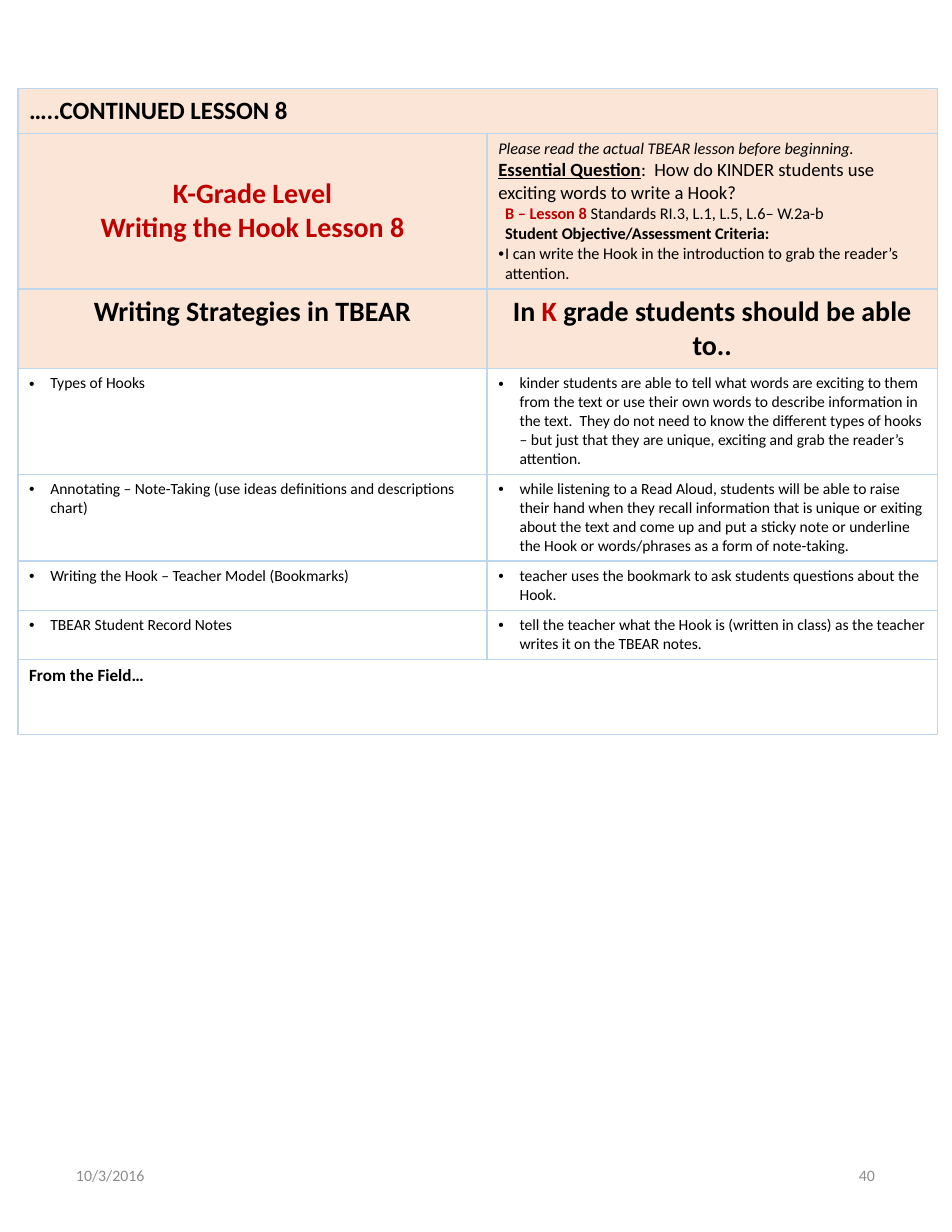
from lxml.etree import SubElement
from pptx import Presentation
from pptx.dml.color import RGBColor
from pptx.enum.text import MSO_ANCHOR, PP_ALIGN
from pptx.oxml.ns import qn
from pptx.util import Inches, Pt

FONT = "Calibri"
BLACK, RED, GRAY = "000000", "C00000", "8C8C8C"
PEACH, WHITE, BORDER = "FBE5D6", "FFFFFF", "BDD7EE"

COLUMN_WIDTHS = [4.19, 4.02]
ROW_HEIGHTS = [0.4, 1.39, 0.71, 0.94, 0.77, 0.44, 0.44, 0.67]

STRATEGIES = [
    ("Types of Hooks",
     "kinder students are able to tell what words are exciting to them from the text or use "
     "their own words to describe information in the text.  They do not need to know the "
     "different types of hooks – but just that they are unique, exciting and grab the "
     "reader’s attention."),
    ("Annotating – Note-Taking (use ideas definitions and descriptions chart)",
     "while listening to a Read Aloud, students will be able to raise their hand when they "
     "recall information that is unique or exiting about the text and come up and put a sticky "
     "note or underline the Hook or words/phrases as a form of note-taking."),
    ("Writing the Hook – Teacher Model (Bookmarks)",
     "teacher uses the bookmark to ask students questions about the Hook."),
    ("TBEAR Student Record Notes",
     "tell the teacher what the Hook is (written in class) as the teacher writes it on the "
     "TBEAR notes."),
]


def color(hex_value):
    return RGBColor.from_string(hex_value)


def add_run(paragraph, text, size=10.5, fill=BLACK, bold=False, italic=False, underline=False):
    run = paragraph.add_run()
    run.text = text
    font = run.font
    font.name, font.size = FONT, Pt(size)
    font.bold, font.italic, font.underline = bold, italic, underline
    font.color.rgb = color(fill)


def add_paragraph(frame, text="", align=PP_ALIGN.LEFT, margin=0, indent=0, bullet=False, **style):
    """Fill the frame's first paragraph if it is empty, otherwise append one."""
    first = frame.paragraphs[0]
    paragraph = frame.add_paragraph() if first.runs else first
    paragraph.alignment = align
    properties = paragraph._p.get_or_add_pPr()
    properties.set("marL", str(Inches(margin)))
    properties.set("indent", str(Inches(indent)))
    if bullet:
        bullet_color = SubElement(properties, qn("a:buClr"))
        SubElement(bullet_color, qn("a:srgbClr"), val=BLACK)
        SubElement(properties, qn("a:buFont"), typeface="Arial")
        SubElement(properties, qn("a:buChar"), char="•")
    if text:
        add_run(paragraph, text, **style)
    return paragraph


def format_cell(cell, fill):
    properties = cell._tc.get_or_add_tcPr()
    for side in ("a:lnL", "a:lnR", "a:lnT", "a:lnB"):
        line = SubElement(properties, qn(side), w=str(Pt(1)))
        solid = SubElement(line, qn("a:solidFill"))
        SubElement(solid, qn("a:srgbClr"), val=BORDER)
    cell.fill.solid()
    cell.fill.fore_color.rgb = color(fill)


def add_lesson_header(table):
    # Continued banner
    banner = table.cell(0, 0)
    banner.merge(table.cell(0, 1))
    banner.vertical_anchor = MSO_ANCHOR.MIDDLE
    add_paragraph(banner.text_frame, "…..CONTINUED LESSON 8", size=16, bold=True)

    # Lesson name
    name, details = table.cell(1, 0), table.cell(1, 1)
    name.vertical_anchor = details.vertical_anchor = MSO_ANCHOR.MIDDLE
    for text in ("K-Grade Level", "Writing the Hook Lesson 8"):
        add_paragraph(name.text_frame, text, align=PP_ALIGN.CENTER, size=18, fill=RED, bold=True)

    # Essential question and objective
    frame = details.text_frame
    add_paragraph(frame, "Please read the actual TBEAR lesson before beginning.", italic=True)
    question = add_paragraph(frame, "Essential Question", size=12, bold=True, underline=True)
    add_run(question, ":  How do KINDER students use exciting words to write a Hook?", size=12)
    standards = add_paragraph(frame, "B – Lesson 8 ", indent=0.06, fill=RED, bold=True)
    add_run(standards, "Standards RI.3, L.1, L.5, L.6– W.2a-b")
    add_paragraph(frame, "Student Objective/Assessment Criteria:", indent=0.06, bold=True)
    add_paragraph(frame, "I can write the Hook in the introduction to grab the reader’s attention.",
                  margin=0.06, indent=-0.06, bullet=True)


def add_strategy_rows(table):
    # Column headings
    heading = {"size": 18, "bold": True}
    add_paragraph(table.cell(2, 0).text_frame, "Writing Strategies in TBEAR",
                  align=PP_ALIGN.CENTER, **heading)
    outcome = add_paragraph(table.cell(2, 1).text_frame, "In ", align=PP_ALIGN.CENTER, **heading)
    add_run(outcome, "K ", fill=RED, **heading)
    add_run(outcome, "grade students should be able to..", **heading)

    # Bulleted strategies and outcomes
    for row, texts in enumerate(STRATEGIES, start=3):
        for column, text in enumerate(texts):
            add_paragraph(table.cell(row, column).text_frame, text,
                          margin=0.19, indent=-0.19, bullet=True, size=10)


def add_lesson_table(slide, left, top):
    shape = slide.shapes.add_table(
        len(ROW_HEIGHTS), len(COLUMN_WIDTHS), Inches(left), Inches(top),
        Inches(sum(COLUMN_WIDTHS)), Inches(sum(ROW_HEIGHTS)))
    table = shape.table
    table.first_row = table.horz_banding = False
    for column, width in zip(table.columns, COLUMN_WIDTHS):
        column.width = Inches(width)
    for index, (row, height) in enumerate(zip(table.rows, ROW_HEIGHTS)):
        row.height = Inches(height)
        for cell in row.cells:
            format_cell(cell, PEACH if index < 3 else WHITE)

    add_lesson_header(table)
    add_strategy_rows(table)

    # Field notes
    notes = table.cell(7, 0)
    notes.merge(table.cell(7, 1))
    add_paragraph(notes.text_frame, "From the Field…", size=11, bold=True)


def add_footer(slide, left, top, width, height):
    box_width = 1.91
    parts = [("10/3/2016", left, PP_ALIGN.LEFT),
             ("40", left + width - box_width, PP_ALIGN.RIGHT)]
    for text, x, align in parts:
        box = slide.shapes.add_textbox(Inches(x), Inches(top), Inches(box_width), Inches(height))
        frame = box.text_frame
        frame.word_wrap = True
        frame.vertical_anchor = MSO_ANCHOR.MIDDLE
        add_paragraph(frame, text, align=align, size=10.2, fill=GRAY)


def main():
    presentation = Presentation()
    presentation.slide_width, presentation.slide_height = Inches(8.5), Inches(11)
    slide = presentation.slides.add_slide(presentation.slide_layouts[6])
    add_lesson_table(slide, 0.16, 0.79)
    add_footer(slide, 0.58, 10.2, 7.33, 0.59)
    presentation.save("out.pptx")


if __name__ == "__main__":
    main()
